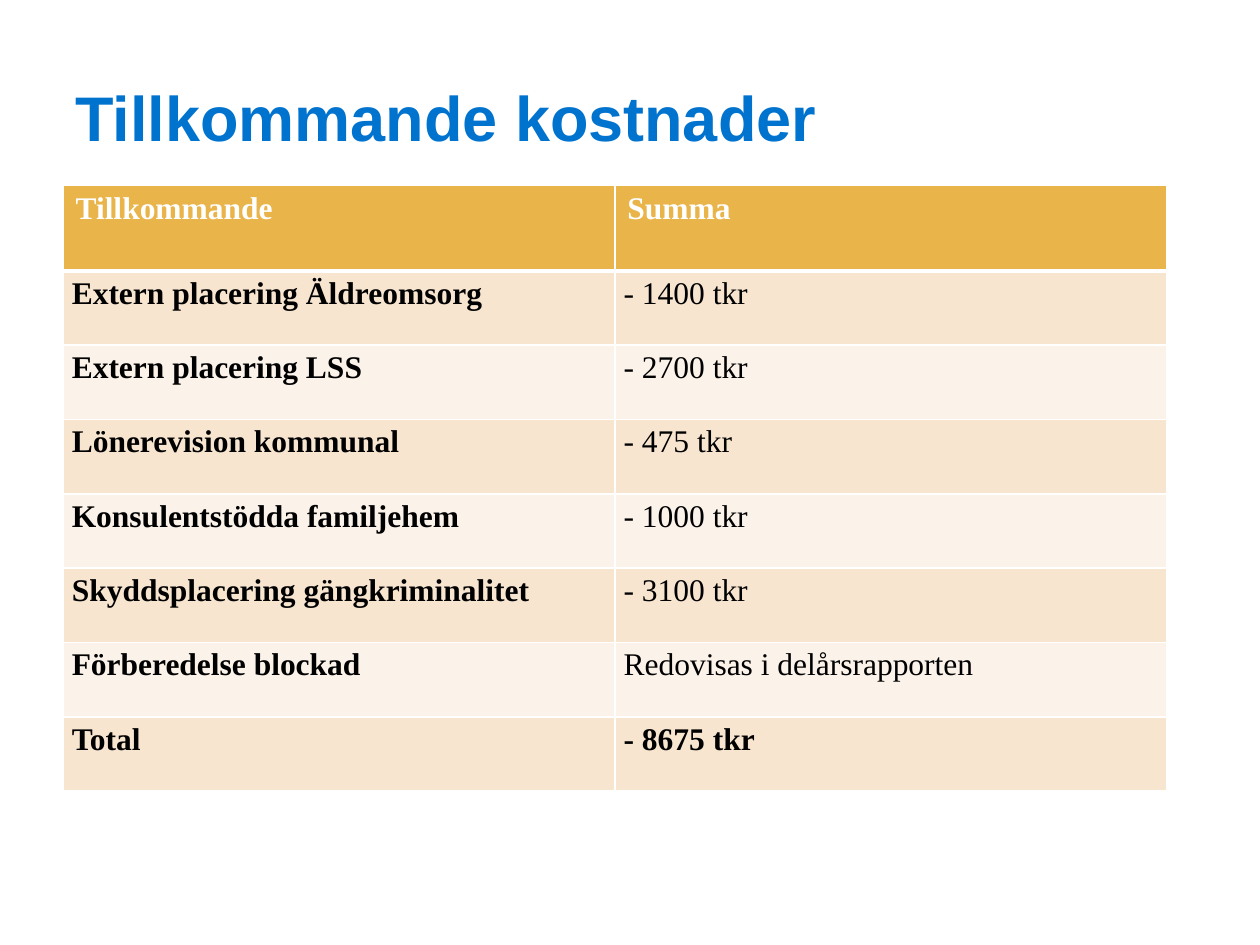
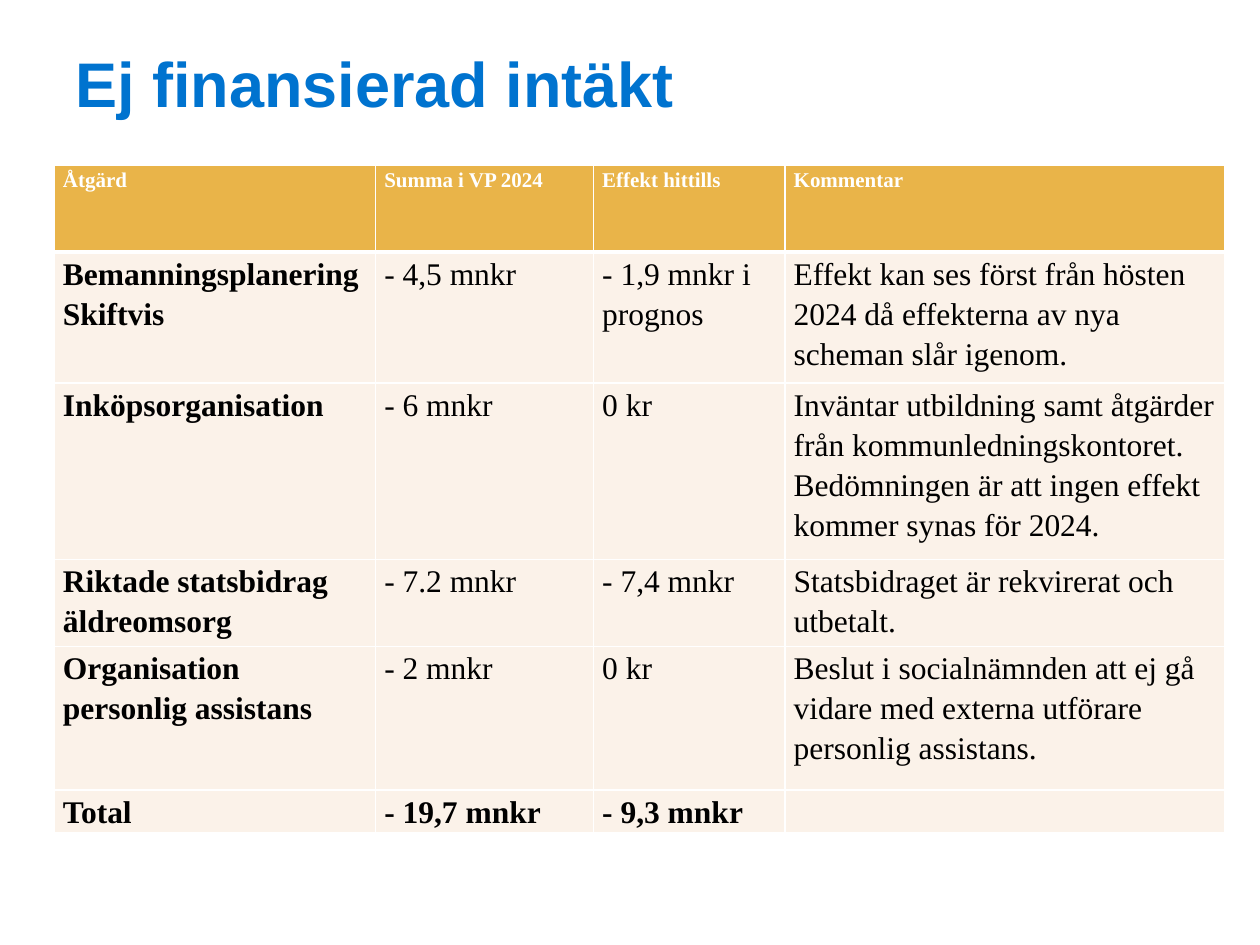
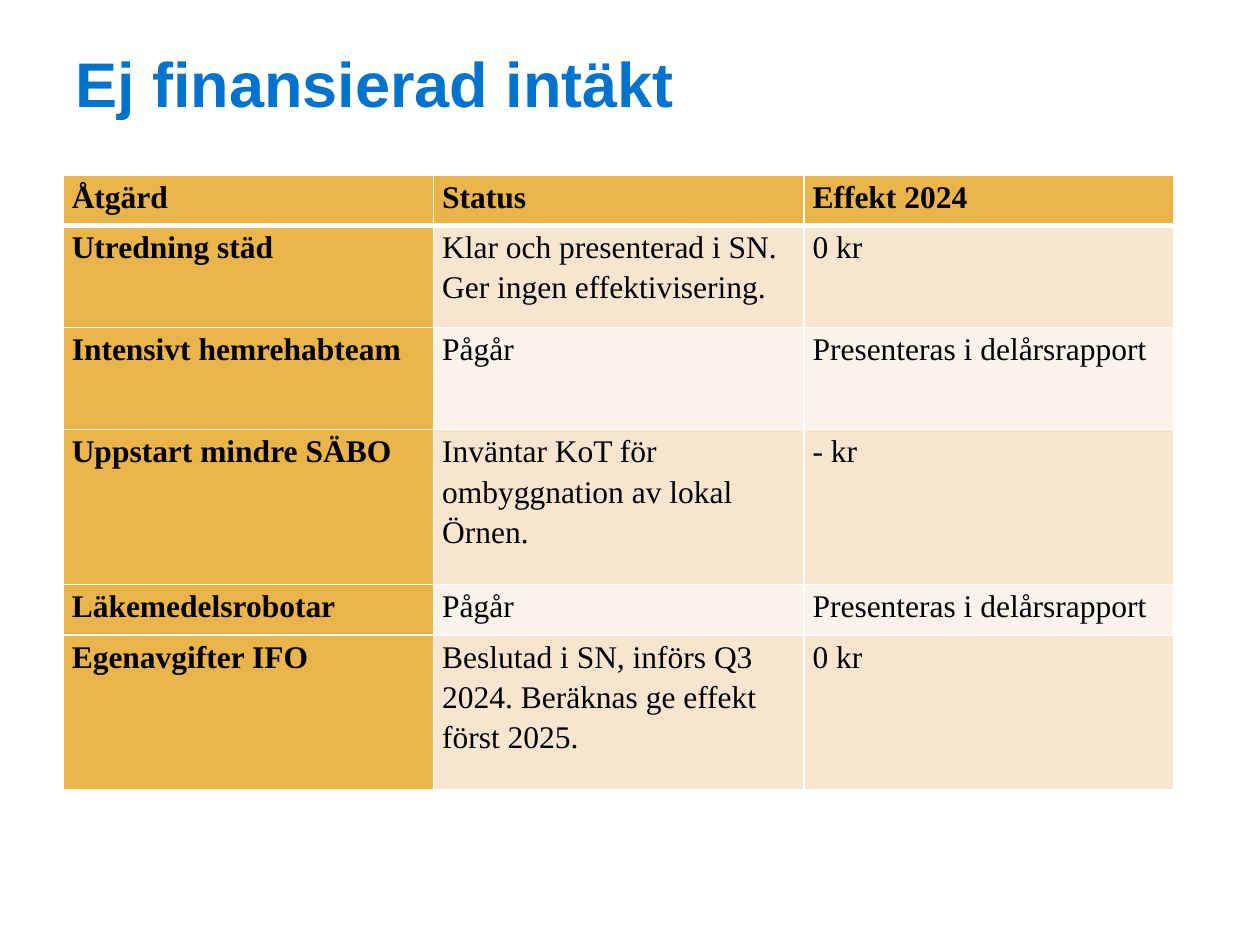
from dataclasses import dataclass

from lxml.etree import SubElement
from pptx import Presentation
from pptx.dml.color import RGBColor
from pptx.enum.text import MSO_ANCHOR, MSO_AUTO_SIZE, PP_ALIGN
from pptx.oxml.ns import qn
from pptx.presentation import Presentation as Deck
from pptx.slide import Slide
from pptx.table import _Cell as Cell
from pptx.util import Inches, Pt

COLOURS = {
    "title": "0073CF",
    "accent": "E9B449",
    "dark band": "F7E5D0",
    "light band": "FBF2E9",
    "white": "FFFFFF",
    "black": "000000",
}
TITLE_FONT = "Arial"
TABLE_FONT = "Times New Roman"
TITLE_ONLY_LAYOUT = 5
GRID_WIDTH = 1
HEADER_RULE_WIDTH = 3


@dataclass(frozen=True)
class CostPage:
    title: str
    left: float
    top: float
    columns: tuple[float, ...]
    row_heights: tuple[float, ...]
    rows: tuple[tuple[str, ...], ...]
    title_anchor: MSO_ANCHOR = MSO_ANCHOR.TOP
    header_size: int = 18
    header_colour: str = "white"
    roomy_header: bool = False
    banded: bool = True
    accent_first_column: bool = False


PAGES = (
    CostPage(
        title="Tillkommande kostnader",
        title_anchor=MSO_ANCHOR.MIDDLE,
        left=0.5,
        top=1.47,
        columns=(4.38,) * 2,
        row_heights=(0.68,) + (0.59,) * 7,
        roomy_header=True,
        rows=(
            ("Tillkommande", "Summa"),
            ("Extern placering Äldreomsorg", "- 1400 tkr"),
            ("Extern placering LSS", "- 2700 tkr"),
            ("Lönerevision kommunal", "- 475 tkr"),
            ("Konsulentstödda familjehem", "- 1000 tkr"),
            ("Skyddsplacering gängkriminalitet", "- 3100 tkr"),
            ("Förberedelse blockad", "Redovisas i delårsrapporten"),
            ("Total", "- 8675 tkr"),
        ),
    ),
    CostPage(
        title="Ej finansierad intäkt",
        left=0.43,
        top=1.31,
        columns=(2.55, 1.73, 1.52, 3.49),
        row_heights=(0.69, 1.04, 1.4, 0.69, 1.14, 0.34),
        header_size=12,
        banded=False,
        rows=(
            ("Åtgärd", "Summa i VP 2024", "Effekt hittills", "Kommentar"),
            ("Bemanningsplanering Skiftvis", "- 4,5 mnkr", "- 1,9 mnkr i prognos",
             "Effekt kan ses först från hösten 2024 då effekterna av nya scheman slår igenom."),
            ("Inköpsorganisation", "- 6 mnkr", "0 kr",
             "Inväntar utbildning samt åtgärder från kommunledningskontoret. "
             "Bedömningen är att ingen effekt kommer synas för 2024."),
            ("Riktade statsbidrag äldreomsorg", "- 7.2 mnkr", "- 7,4 mnkr",
             "Statsbidraget är rekvirerat och utbetalt."),
            ("Organisation personlig assistans", "- 2 mnkr", "0 kr",
             "Beslut i socialnämnden att ej gå vidare med externa utförare personlig assistans."),
            ("Total", "- 19,7 mnkr", "- 9,3 mnkr", ""),
        ),
    ),
    CostPage(
        title="Ej finansierad intäkt",
        left=0.5,
        top=1.39,
        columns=(2.94,) * 3,
        row_heights=(0.4, 0.81, 0.81, 1.23, 0.4, 1.23),
        header_colour="black",
        accent_first_column=True,
        rows=(
            ("Åtgärd", "Status", "Effekt 2024"),
            ("Utredning städ", "Klar och presenterad i SN. Ger ingen effektivisering.", "0 kr"),
            ("Intensivt hemrehabteam", "Pågår", "Presenteras i delårsrapport"),
            ("Uppstart mindre SÄBO", "Inväntar KoT för ombyggnation av lokal Örnen.", "- kr"),
            ("Läkemedelsrobotar", "Pågår", "Presenteras i delårsrapport"),
            ("Egenavgifter IFO",
             "Beslutad i SN, införs Q3 2024. Beräknas ge effekt först 2025.", "0 kr"),
        ),
    ),
)


def colour(name: str) -> RGBColor:
    return RGBColor.from_string(COLOURS[name])


def add_span(para, text: str, font: str, size: int, colour_name: str, bold: bool) -> None:
    span = para.add_run()
    span.text = text
    span.font.name = font
    span.font.size = Pt(size)
    span.font.bold = bold
    span.font.color.rgb = colour(colour_name)


def set_title(slide: Slide, page: CostPage) -> None:
    box = slide.shapes.title
    box.left, box.top = Inches(0.5), Inches(0.3)
    box.width, box.height = Inches(9), Inches(1.25)
    frame = box.text_frame
    frame.auto_size = MSO_AUTO_SIZE.NONE
    frame.word_wrap = True
    frame.vertical_anchor = page.title_anchor
    para = frame.paragraphs[0]
    para.alignment = PP_ALIGN.LEFT
    add_span(para, page.title, TITLE_FONT, 36, "title", True)


def set_borders(cell: Cell, row: int) -> None:
    """Draw the white grid, with a heavier rule between header and body."""
    widths = {
        "a:lnL": GRID_WIDTH,
        "a:lnR": GRID_WIDTH,
        "a:lnT": HEADER_RULE_WIDTH if row == 1 else GRID_WIDTH,
        "a:lnB": HEADER_RULE_WIDTH if row == 0 else GRID_WIDTH,
    }
    properties = cell._tc.get_or_add_tcPr()
    for position, (tag, width) in enumerate(widths.items()):
        line = SubElement(properties, qn(tag), w=str(Pt(width)))
        fill = SubElement(line, qn("a:solidFill"))
        SubElement(fill, qn("a:srgbClr"), val=COLOURS["white"])
        properties.insert(position, line)


def cell_fill(page: CostPage, row: int, column: int) -> str:
    if row == 0 or (page.accent_first_column and column == 0):
        return "accent"
    return "dark band" if page.banded and row % 2 else "light band"


def format_cell(cell: Cell, page: CostPage, row: int, column: int) -> None:
    is_header = row == 0
    cell.fill.solid()
    cell.fill.fore_color.rgb = colour(cell_fill(page, row, column))
    set_borders(cell, row)

    para = cell.text_frame.paragraphs[0]
    if not (is_header and page.roomy_header):
        cell.margin_left = cell.margin_right = Inches(0.07)
        cell.margin_top = cell.margin_bottom = Inches(0)
        para.line_spacing = 1.15
        para.space_after = Pt(10)

    text = page.rows[row][column]
    if text:
        bold = is_header or column == 0 or page.rows[row][0] == "Total"
        size = page.header_size if is_header else 18
        colour_name = page.header_colour if is_header else "black"
        add_span(para, text, TABLE_FONT, size, colour_name, bold)


def add_cost_table(slide: Slide, page: CostPage) -> None:
    table = slide.shapes.add_table(
        len(page.rows), len(page.columns), Inches(page.left), Inches(page.top),
        Inches(sum(page.columns)), Inches(sum(page.row_heights)),
    ).table
    table.horz_banding = False
    for column, width in zip(table.columns, page.columns):
        column.width = Inches(width)
    for row, height in zip(table.rows, page.row_heights):
        row.height = Inches(height)
    for row in range(len(page.rows)):
        for column in range(len(page.columns)):
            format_cell(table.cell(row, column), page, row, column)


def add_page(deck: Deck, page: CostPage) -> None:
    slide = deck.slides.add_slide(deck.slide_layouts[TITLE_ONLY_LAYOUT])
    set_title(slide, page)
    add_cost_table(slide, page)


def main() -> None:
    deck = Presentation()
    deck.slide_width, deck.slide_height = Inches(10), Inches(7.5)
    for page in PAGES:
        add_page(deck, page)
    deck.save("out.pptx")


if __name__ == "__main__":
    main()
